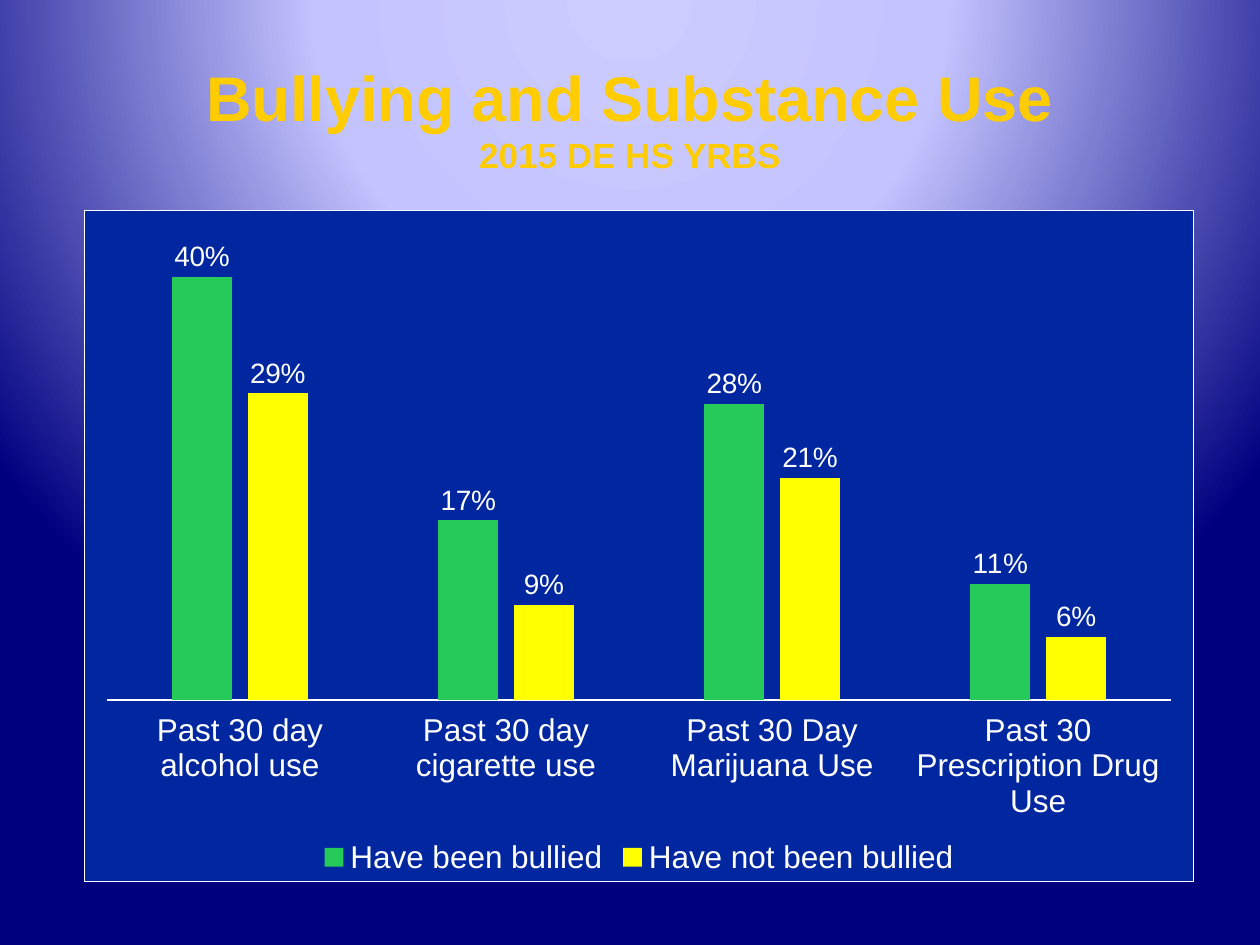
from dataclasses import dataclass

from lxml import etree
from pptx import Presentation
from pptx.chart.data import CategoryChartData
from pptx.dml.color import RGBColor
from pptx.enum.chart import XL_CHART_TYPE, XL_LABEL_POSITION, XL_LEGEND_POSITION, XL_TICK_LABEL_POSITION, XL_TICK_MARK
from pptx.enum.text import MSO_ANCHOR, PP_ALIGN
from pptx.oxml import parse_xml
from pptx.oxml.ns import nsdecls, qn
from pptx.util import Pt

EMU_PER_PX = 914400 / 126
FONT = "Arial"
WHITE, GOLD, PANEL_BLUE = "FFFFFF", "FFCC00", "00279F"


@dataclass
class Series:
    name: str
    values: tuple
    color: str


@dataclass
class TitleLine:
    text: str
    size: int


CATEGORIES = (
    "Past 30 day alcohol use",
    "Past 30 day cigarette use",
    "Past 30 Day Marijuana Use",
    "Past 30 Prescription Drug Use",
)
SERIES = (
    Series("Have been bullied", (0.40, 0.17, 0.28, 0.11), "26CA59"),
    Series("Have not been bullied", (0.29, 0.09, 0.21, 0.06), "FFFF00"),
)
TITLE_LINES = (TitleLine("Bullying and Substance Use", 36), TitleLine("2015 DE HS YRBS", 20))
GRADIENT_STOPS = ((0, "CCCCFF"), (40, "C3C3FF"), (100, "00007F"))
PLOT_LAYOUT = {"x": 0.02, "y": 0.02, "w": 0.96, "h": 0.71}


def px(length: int) -> int:
    return round(length * EMU_PER_PX)


def rgb(color: str) -> RGBColor:
    return RGBColor.from_string(color)


def set_attributes(target, values: dict) -> None:
    for name, value in values.items():
        setattr(target, name, value)


def style_font(font, size: int, color: str = WHITE, bold: bool = False) -> None:
    set_attributes(font, {"name": FONT, "size": Pt(size), "bold": bold})
    font.color.rgb = rgb(color)


def set_background(slide) -> None:
    fill = slide.background.fill
    fill.gradient()
    stops = "".join(
        f'<a:gs pos="{position * 1000}"><a:srgbClr val="{color}"/></a:gs>'
        for position, color in GRADIENT_STOPS
    )
    gradient = parse_xml(
        f'<a:gradFill {nsdecls("a")} rotWithShape="0"><a:gsLst>{stops}</a:gsLst>'
        '<a:path path="circle"><a:fillToRect l="50000" t="-80000" r="50000" b="180000"/>'
        "</a:path></a:gradFill>"
    )
    old_gradient = next(slide.element.iter(qn("a:gradFill")))
    old_gradient.getparent().replace(old_gradient, gradient)


def add_title(slide, lines: tuple) -> None:
    text_box = slide.shapes.add_textbox(px(0), px(48), px(1260), px(152))
    set_attributes(text_box.text_frame, {
        "word_wrap": True,
        "vertical_anchor": MSO_ANCHOR.MIDDLE,
        "margin_top": px(6),
        "margin_bottom": px(20),
    })
    paragraph = text_box.text_frame.paragraphs[0]
    paragraph.alignment = PP_ALIGN.CENTER
    for index, line in enumerate(lines):
        if index:
            paragraph.add_line_break()
        run = paragraph.add_run()
        run.text = line.text
        style_font(run.font, line.size, GOLD, bold=True)


def style_panel(chart) -> None:
    """Fill and frame the chart area and place its plot."""
    panel = parse_xml(
        f'<c:spPr {nsdecls("c", "a")}>'
        f'<a:solidFill><a:srgbClr val="{PANEL_BLUE}"/></a:solidFill>'
        f'<a:ln w="9525"><a:solidFill><a:srgbClr val="{WHITE}"/></a:solidFill></a:ln></c:spPr>'
    )
    chart_space = chart.element
    chart_space.find(qn("c:chart")).addnext(panel)

    plot_area = next(chart_space.iter(qn("c:plotArea")))
    for old_layout in plot_area.findall(qn("c:layout")):
        plot_area.remove(old_layout)
    layout = etree.Element(qn("c:layout"))
    manual = etree.SubElement(layout, qn("c:manualLayout"))
    settings = {"layoutTarget": "inner", "xMode": "edge", "yMode": "edge", **PLOT_LAYOUT}
    for name, value in settings.items():
        etree.SubElement(manual, qn(f"c:{name}")).set("val", str(value))
    plot_area.insert(0, layout)


def add_column_chart(slide, categories: tuple, series_list: tuple) -> None:
    data = CategoryChartData(number_format="0%")
    data.categories = categories
    for item in series_list:
        data.add_series(item.name, item.values)
    chart = slide.shapes.add_chart(
        XL_CHART_TYPE.COLUMN_CLUSTERED, px(84), px(210), px(1110), px(672), data
    ).chart
    style_font(chart.font, 10)
    set_attributes(chart, {"has_title": False, "has_legend": True})
    style_panel(chart)

    # Legend
    set_attributes(chart.legend, {"position": XL_LEGEND_POSITION.BOTTOM, "include_in_layout": False})
    style_font(chart.legend.font, 18)

    # Axes
    set_attributes(chart.value_axis, {
        "visible": False,
        "has_major_gridlines": False,
        "minimum_scale": 0,
        "maximum_scale": 0.45,
    })
    category_axis = chart.category_axis
    set_attributes(category_axis, {
        "major_tick_mark": XL_TICK_MARK.NONE,
        "minor_tick_mark": XL_TICK_MARK.NONE,
        "tick_label_position": XL_TICK_LABEL_POSITION.LOW,
    })
    style_font(category_axis.tick_labels.font, 18)
    category_axis.format.line.color.rgb = rgb(WHITE)
    category_axis.format.line.width = Pt(0.75)

    # Columns and their labels
    plot = chart.plots[0]
    set_attributes(plot, {"gap_width": 219, "overlap": -27, "vary_by_categories": False})
    for series, item in zip(plot.series, series_list):
        series.format.fill.solid()
        series.format.fill.fore_color.rgb = rgb(item.color)
        labels = series.data_labels
        set_attributes(labels, {
            "show_value": True,
            "number_format": "0%",
            "number_format_is_linked": False,
            "position": XL_LABEL_POSITION.OUTSIDE_END,
        })
        style_font(labels.font, 16)


def main() -> None:
    presentation = Presentation()
    set_attributes(presentation, {"slide_width": px(1260), "slide_height": px(945)})
    slide = presentation.slides.add_slide(presentation.slide_layouts[6])
    set_background(slide)
    add_title(slide, TITLE_LINES)
    add_column_chart(slide, CATEGORIES, SERIES)
    presentation.save("out.pptx")


if __name__ == "__main__":
    main()
